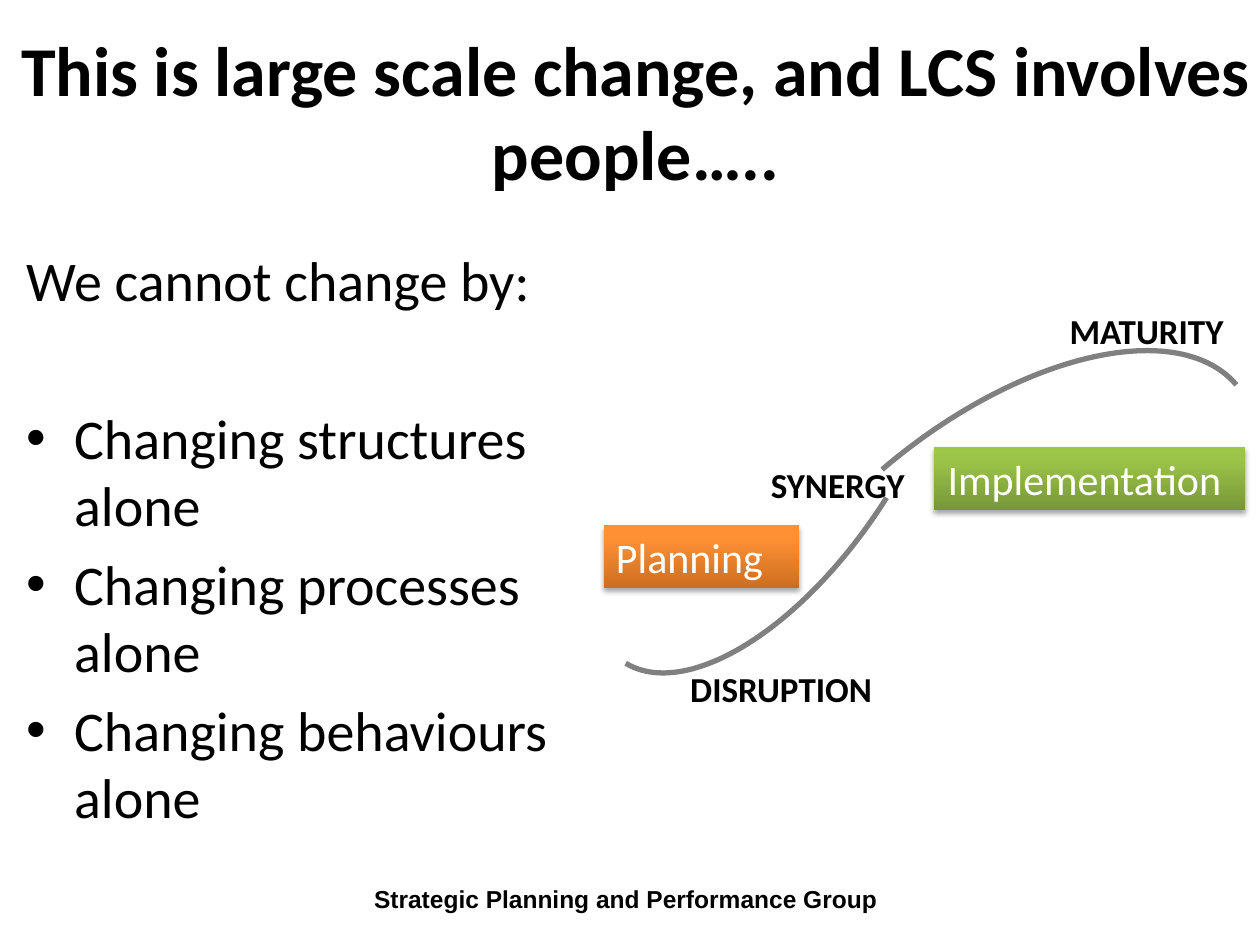
from lxml import etree
from pptx import Presentation
from pptx.dml.color import RGBColor
from pptx.enum.shapes import MSO_SHAPE
from pptx.enum.text import MSO_ANCHOR, MSO_AUTO_SIZE, PP_ALIGN
from pptx.oxml import parse_xml
from pptx.util import Inches, Pt

ARC, RECT = MSO_SHAPE.ARC, MSO_SHAPE.RECTANGLE
TOP, MIDDLE = MSO_ANCHOR.TOP, MSO_ANCHOR.MIDDLE
LEFT, CENTER = PP_ALIGN.LEFT, PP_ALIGN.CENTER
GROW = MSO_AUTO_SIZE.SHAPE_TO_FIT_TEXT
NS = "http://schemas.openxmlformats.org/drawingml/2006/main"

BULLETS = ["Changing structures alone", "Changing processes alone", "Changing behaviours alone"]
ARCS = [
    ((3.97, 2.41, 4.32, 2.07), 123.1, (159.61, 215.72)),
    ((5.48, 3.34, 4.87, 2.48), 321.6, (156.89, 215.76)),
]
PHASES = [
    ("Planning", (4.79, 4.17, 1.55, 0.5), ("CC6E20", "FF9034", "FF9136"), LEFT, True),
    ("Implementation ", (7.41, 3.55, 2.47, 0.5), ("779737", "9BC348", "9DC746"), CENTER, False),
]
STAGES = [
    ("DISRUPTION", (5.38, 5.25, 1.66, 0.44)),
    ("SYNERGY ", (6.02, 3.63, 1.33, 0.44)),
    ("MATURITY", (8.39, 2.41, 1.5, 0.44)),
]


def color(value):
    """Turn a hex string into a colour."""
    return RGBColor.from_string(value)


def inches(box):
    """Turn a box of plain numbers into lengths."""
    return [Inches(v) for v in box]


def style(p, size, bold=False, name="Calibri", fill="000000"):
    """Format every run of a paragraph."""
    for r in p.runs:
        r.font.name = name
        r.font.size = Pt(size)
        r.font.bold = bold
        r.font.color.rgb = color(fill)


def add_text(s, box, text, size, wrap=True, align=LEFT, anchor=TOP, **font):
    """Add a text box with one formatted paragraph."""
    sp = s.shapes.add_textbox(*inches(box))
    tf = sp.text_frame
    tf.word_wrap = wrap
    tf.vertical_anchor = anchor
    tf.text = text
    p = tf.paragraphs[0]
    p.alignment = align
    style(p, size, **font)
    return sp


def add_body(s, box):
    """Add the lead-in line and its bullet list."""
    tf = add_text(s, box, "We cannot change by:", 32).text_frame
    for i, text in enumerate(BULLETS):
        p = tf.add_paragraph()
        p.text = text
        pPr = p._p.get_or_add_pPr()
        pPr.set("marL", str(Inches(0.38)))
        pPr.set("indent", str(-Inches(0.38)))
        etree.SubElement(pPr, f"{{{NS}}}buFont", typeface="Arial")
        etree.SubElement(pPr, f"{{{NS}}}buChar", char="•")
        p.space_before = Pt(6.4 if i else 52)
        style(p, 32)


def add_arc(s, box, rotation, angles):
    """Add one grey stretch of the change curve."""
    sp = s.shapes.add_shape(ARC, *inches(box))
    sp.shadow.inherit = False
    sp.rotation = rotation
    sp.adjustments[0], sp.adjustments[1] = angles
    sp.fill.background()
    sp.line.color.rgb = color("808080")
    sp.line.width = Pt(3)


def add_phase(s, text, box, shades, align, wrap):
    """Add a shaded phase box with a soft shadow."""
    sp = s.shapes.add_shape(RECT, *inches(box))
    sp.line.fill.background()
    stops = "".join(
        f'<a:gs pos="{pos}"><a:srgbClr val="{shade}"/></a:gs>'
        for pos, shade in zip((0, 80000, 100000), shades)
    )
    gradient = parse_xml(
        f'<a:gradFill xmlns:a="{NS}" rotWithShape="1"><a:gsLst>{stops}</a:gsLst>'
        '<a:lin ang="16200000" scaled="0"/></a:gradFill>'
    )
    shadow = parse_xml(
        f'<a:effectLst xmlns:a="{NS}"><a:outerShdw blurRad="{Pt(3.1)}" dist="{Pt(1.8)}" '
        'dir="5400000" rotWithShape="0"><a:srgbClr val="000000"><a:alpha val="35000"/>'
        "</a:srgbClr></a:outerShdw></a:effectLst>"
    )
    spPr = sp._element.spPr
    spPr.find(f"{{{NS}}}prstGeom").addnext(gradient)
    spPr.append(shadow)
    tf = sp.text_frame
    tf.word_wrap = wrap
    tf.auto_size = GROW
    tf.vertical_anchor = TOP
    tf.text = text
    tf.paragraphs[0].alignment = align
    style(tf.paragraphs[0], 24, fill="FFFFFF")


def add_curve(s):
    """Add the change curve with its phases and stages."""
    for arc in ARCS:
        add_arc(s, *arc)
    for phase in PHASES:
        add_phase(s, *phase)
    for text, box in STAGES:
        sp = add_text(s, box, text, 20, wrap=False, bold=True)
        sp.text_frame.auto_size = GROW


def main():
    """Build and save the slide."""
    prs = Presentation()
    prs.slide_width, prs.slide_height = Inches(10), Inches(7.5)
    s = prs.slides.add_slide(prs.slide_layouts[6])
    add_text(s, (2.87, 6.97, 4.65, 0.4), "Strategic Planning and Performance Group", 14,
             bold=True, name="Arial")
    add_text(s, (0.06, 0.03, 9.97, 1.69), "This is large scale change, and LCS involves people…..",
             40, align=CENTER, anchor=MIDDLE, bold=True)
    add_body(s, (0.11, 1.9, 4.59, 4.53))
    add_curve(s)
    prs.save("out.pptx")


if __name__ == "__main__":
    main()
